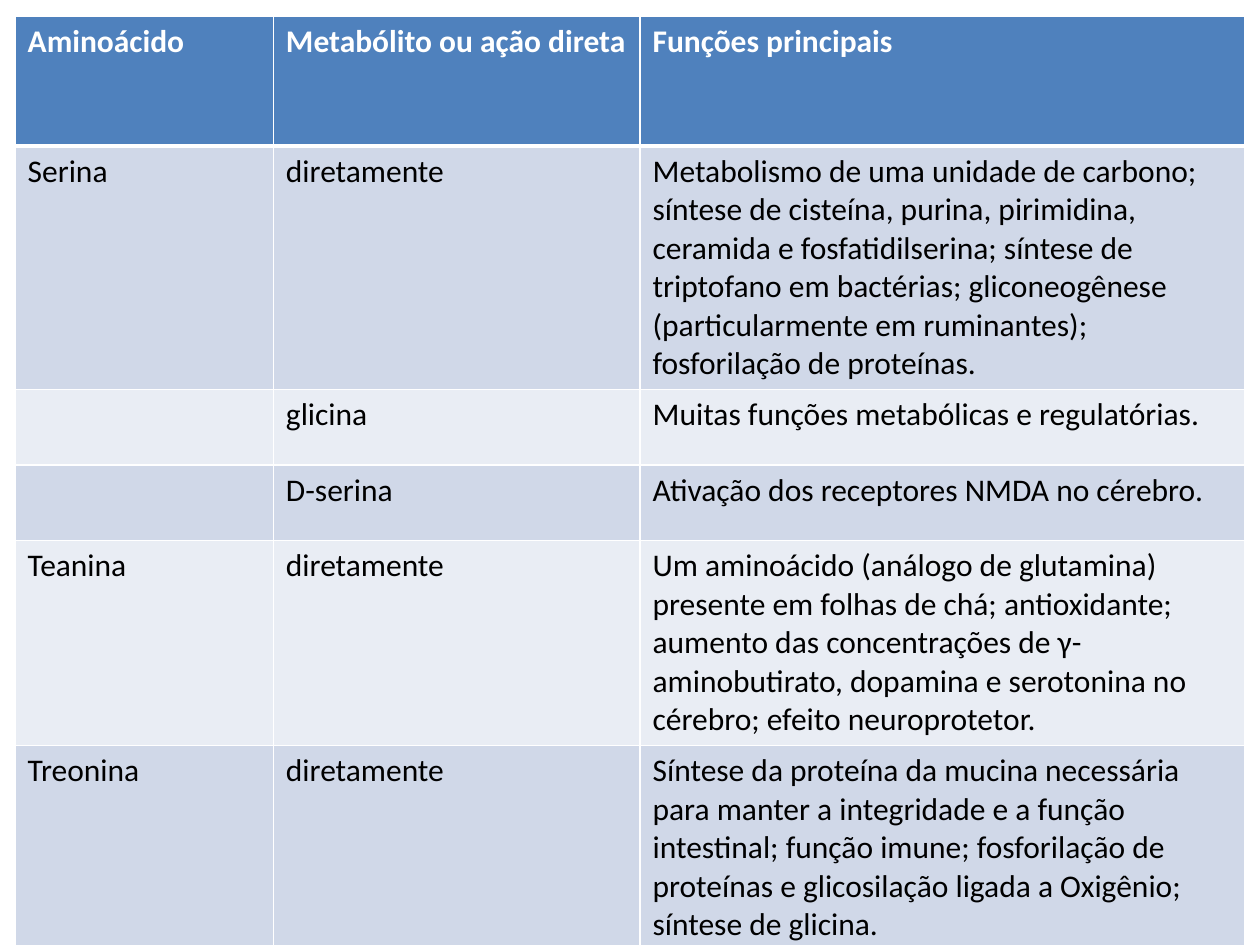
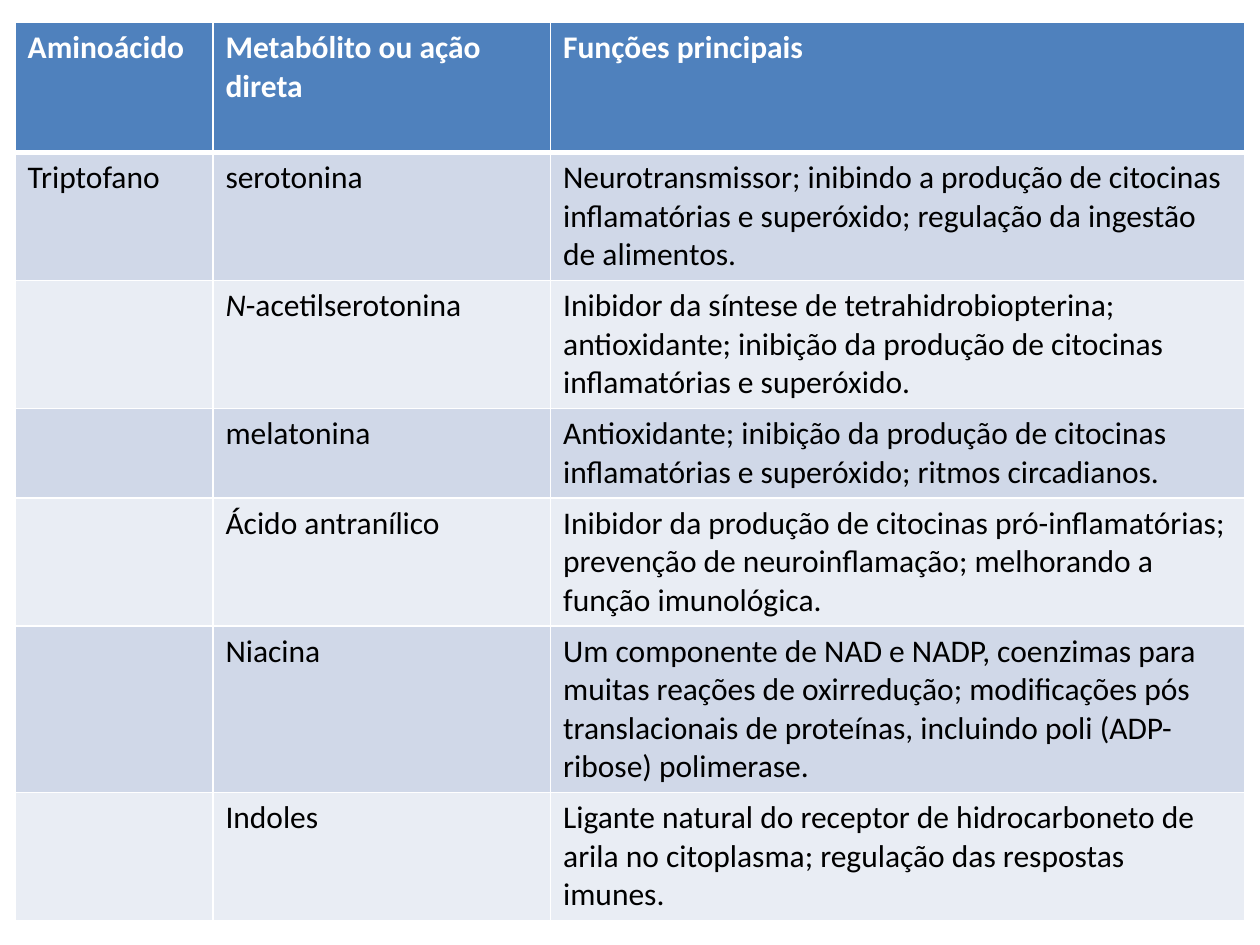
from lxml.etree import SubElement
from pptx import Presentation
from pptx.dml.color import RGBColor
from pptx.oxml.ns import qn
from pptx.util import Inches, Pt

COLORS = {
    "header": "4F81BD",
    "odd_row": "D0D8E8",
    "even_row": "E9EDF4",
    "border": "FFFFFF",
    "header_text": "FFFFFF",
    "body_text": "000000",
}
FONT = "Calibri"
TEXT_SIZE = 18
HEADER_HEIGHT, ROW_HEIGHT = 1.03, 0.6
THIN, THICK = 1, 3
ITALIC_PREFIX = "N"  # the chemical locant in names such as N-acetil...

HEADINGS = ("Aminoácido", "Metabólito ou ação direta", "Funções principais")

SERINE_TO_THREONINE = [
    ("Serina", "diretamente",
     "Metabolismo de uma unidade de carbono; síntese de cisteína, purina, "
     "pirimidina, ceramida e fosfatidilserina; síntese de triptofano em "
     "bactérias; gliconeogênese (particularmente em ruminantes); "
     "fosforilação de proteínas."),
    ("", "glicina", "Muitas funções metabólicas e regulatórias."),
    ("", "D-serina", "Ativação dos receptores NMDA no cérebro."),
    ("Teanina", "diretamente",
     "Um aminoácido (análogo de glutamina) presente em folhas de chá; "
     "antioxidante; aumento das concentrações de γ-aminobutirato, dopamina "
     "e serotonina no cérebro; efeito neuroprotetor."),
    ("Treonina", "diretamente",
     "Síntese da proteína da mucina necessária para manter a integridade e "
     "a função intestinal; função imune; fosforilação de proteínas e "
     "glicosilação ligada a Oxigênio; síntese de glicina."),
]

TRYPTOPHAN = [
    ("Triptofano", "serotonina",
     "Neurotransmissor; inibindo a produção de citocinas inflamatórias e "
     "superóxido; regulação da ingestão de alimentos."),
    ("", "N-acetilserotonina",
     "Inibidor da síntese de tetrahidrobiopterina; antioxidante; inibição "
     "da produção de citocinas inflamatórias e superóxido."),
    ("", "melatonina",
     "Antioxidante; inibição da produção de citocinas inflamatórias e "
     "superóxido; ritmos circadianos."),
    ("", "Ácido antranílico",
     "Inibidor da produção de citocinas pró-inflamatórias; prevenção de "
     "neuroinflamação; melhorando a função imunológica."),
    ("", "Niacina",
     "Um componente de NAD e NADP, coenzimas para muitas reações de "
     "oxirredução; modificações pós translacionais de proteínas, incluindo "
     "poli (ADP-ribose) polimerase."),
    ("", "Indoles",
     "Ligante natural do receptor de hidrocarboneto de arila no citoplasma; "
     "regulação das respostas imunes."),
]


def rgb(name):
    return RGBColor.from_string(COLORS[name])


def set_borders(cell, top, bottom):
    """Draw the four cell edges; left and right are always thin."""
    properties = cell._tc.get_or_add_tcPr()
    for side, width in zip("LRTB", (THIN, THIN, top, bottom)):
        line = SubElement(properties, qn(f"a:ln{side}"), w=str(Pt(width)))
        fill = SubElement(line, qn("a:solidFill"))
        SubElement(fill, qn("a:srgbClr"), val=COLORS["border"])


def write_text(cell, text, is_header):
    para = cell.text_frame.paragraphs[0]
    para.font.size = Pt(TEXT_SIZE)
    if text.startswith(ITALIC_PREFIX + "-"):
        para.add_run().text = ITALIC_PREFIX
        para.runs[0].font.italic = True
        text = text.removeprefix(ITALIC_PREFIX)
    if text:
        para.add_run().text = text
    for span in para.runs:
        span.font.name = FONT
        span.font.size = Pt(TEXT_SIZE)
        span.font.bold = is_header
        span.font.color.rgb = rgb("header_text" if is_header else "body_text")


def style_cell(cell, row_index):
    set_borders(cell, THICK if row_index == 1 else THIN,
                THICK if row_index == 0 else THIN)
    shade = "odd_row" if row_index % 2 else "even_row"
    cell.fill.solid()
    cell.fill.fore_color.rgb = rgb(shade if row_index else "header")


def add_amino_acid_slide(deck, left, top, column_widths, entries):
    page = deck.slides.add_slide(deck.slide_layouts[6])
    rows = [HEADINGS, *entries]
    height = HEADER_HEIGHT + ROW_HEIGHT * len(entries)
    table = page.shapes.add_table(
        len(rows), len(HEADINGS), Inches(left), Inches(top),
        Inches(sum(column_widths)), Inches(height)).table
    for column, width in zip(table.columns, column_widths):
        column.width = Inches(width)
    for row_index, texts in enumerate(rows):
        row = table.rows[row_index]
        row.height = Inches(ROW_HEIGHT if row_index else HEADER_HEIGHT)
        for cell, text in zip(row.cells, texts):
            style_cell(cell, row_index)
            write_text(cell, text, is_header=row_index == 0)


def main():
    deck = Presentation()
    deck.slide_width, deck.slide_height = Inches(10), Inches(7.5)
    add_amino_acid_slide(deck, 0.12, 0.13, (2.05, 2.91, 4.8),
                         SERINE_TO_THREONINE)
    add_amino_acid_slide(deck, 0.12, 0.18, (1.57, 2.68, 5.51), TRYPTOPHAN)
    deck.save("out.pptx")


if __name__ == "__main__":
    main()
